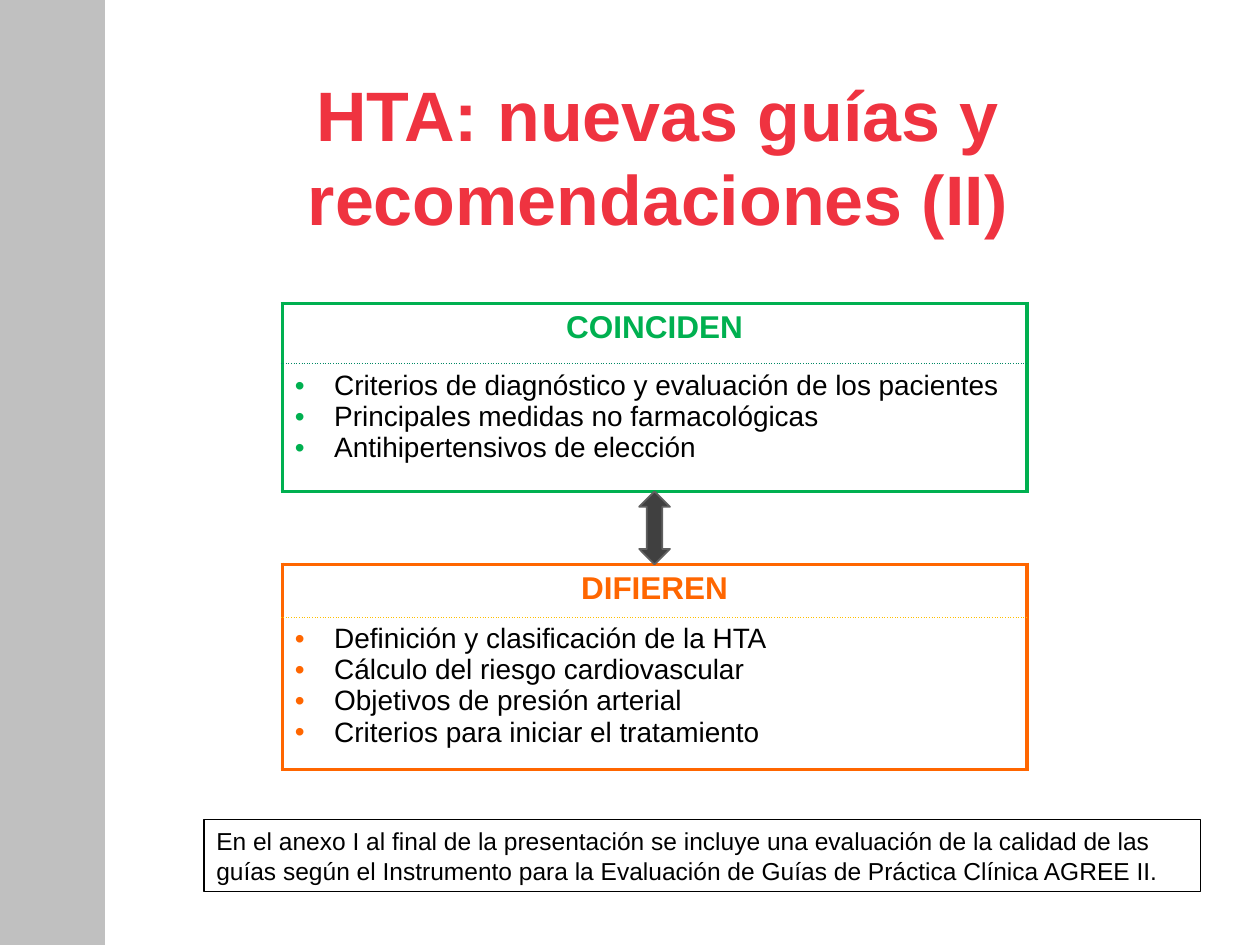
import lxml.etree
import pptx
import pptx.dml.color
import pptx.enum.shapes
import pptx.enum.text
import pptx.oxml.ns
import pptx.util

Pt = pptx.util.Pt
Align = pptx.enum.text.PP_ALIGN
Anchor = pptx.enum.text.MSO_ANCHOR
Shape = pptx.enum.shapes.MSO_SHAPE
qn = pptx.oxml.ns.qn

TITLE = "HTA: nuevas guías y recomendaciones (II)"
NOTE = ("En el anexo I al final de la presentación se incluye una evaluación "
        "de la calidad de las guías según el Instrumento para la Evaluación "
        "de Guías de Práctica Clínica AGREE II.")
PANELS = [
    {"heading": "COINCIDEN", "color": "00B050", "divider": "028865",
     "top": 173.5, "rows": (34.3, 73),
     "items": ["Criterios de diagnóstico y evaluación de los pacientes",
               "Principales medidas no farmacológicas",
               "Antihipertensivos de elección"]},
    {"heading": "DIFIEREN", "color": "FF6600", "divider": "FFC000",
     "top": 322.5, "rows": (30.2, 87),
     "items": ["Definición y clasificación de la HTA",
               "Cálculo del riesgo cardiovascular",
               "Objetivos de presión arterial",
               "Criterios para iniciar el tratamiento"]},
]
PANEL_LEFT, PANEL_WIDTH = 161.3, 425.5
ARROW_WIDTH = 17.6
INDENT = 22.5


def rgb(value):
    return pptx.dml.color.RGBColor.from_string(value)


def set_font(font, size, color, bold=False):
    font.name, font.size, font.bold = "Arial", Pt(size), bold
    font.color.rgb = rgb(color)


def add_shape(page, kind, left, top, width, height, fill, line, weight):
    shape = page.shapes.add_shape(kind, Pt(left), Pt(top), Pt(width), Pt(height))
    shape.shadow.inherit = False
    if fill:
        shape.fill.solid()
        shape.fill.fore_color.rgb = rgb(fill)
    else:
        shape.fill.background()
    shape.line.color.rgb = rgb(line)
    shape.line.width = Pt(weight)
    return shape


def set_borders(cell, borders):
    """Borders are (color, width, dash) for left, right, top and bottom."""
    properties = cell._tc.get_or_add_tcPr()
    for place, (side, (color, width, dash)) in enumerate(zip("LRTB", borders)):
        line = lxml.etree.Element(qn(f"a:ln{side}"), w=str(int(Pt(width))))
        fill = lxml.etree.SubElement(line, qn("a:solidFill"))
        lxml.etree.SubElement(fill, qn("a:srgbClr"), val=color)
        lxml.etree.SubElement(line, qn("a:prstDash"), val=dash)
        properties.insert(place, line)


def add_bullet(para, color):
    properties = para._p.get_or_add_pPr()
    properties.set("marL", str(int(Pt(INDENT))))
    properties.set("indent", str(-int(Pt(INDENT))))
    bullet_color = lxml.etree.SubElement(properties, qn("a:buClr"))
    lxml.etree.SubElement(bullet_color, qn("a:srgbClr"), val=color)
    lxml.etree.SubElement(properties, qn("a:buFont"), typeface="Arial")
    lxml.etree.SubElement(properties, qn("a:buChar"), char="•")


def add_panel(page, panel):
    color = panel["color"]
    table = page.shapes.add_table(
        2, 1, Pt(PANEL_LEFT), Pt(panel["top"]),
        Pt(PANEL_WIDTH), Pt(sum(panel["rows"]))).table
    table.first_row = table.horz_banding = False
    for row, height in zip(table.rows, panel["rows"]):
        row.height = Pt(height)
    head, body = table.cell(0, 0), table.cell(1, 0)
    frame, divider = (color, 2.25, "solid"), (panel["divider"], 0.25, "sysDot")
    set_borders(head, (frame, frame, frame, divider))
    set_borders(body, (frame, frame, divider, frame))
    for cell in (head, body):
        cell.fill.solid()
        cell.fill.fore_color.rgb = rgb("FFFFFF")

    head.text = panel["heading"]
    para = head.text_frame.paragraphs[0]
    para.alignment = Align.CENTER
    set_font(para.font, 18, color, bold=True)
    body.text = "\n".join(panel["items"])
    for para in body.text_frame.paragraphs:
        add_bullet(para, color)
        set_font(para.font, 16, "000000")


def add_title(page):
    title = page.shapes.title
    title.left, title.top, title.width, title.height = (
        Pt(65.5), Pt(37.4), Pt(620.6), Pt(123.8))
    frame = title.text_frame
    frame.text = TITLE
    frame.word_wrap = True
    frame.auto_size = pptx.enum.text.MSO_AUTO_SIZE.NONE
    frame.vertical_anchor = Anchor.TOP
    para = frame.paragraphs[0]
    para.alignment = Align.CENTER
    set_font(para.font, 40, "EF3340", bold=True)


def add_note(page):
    box = add_shape(page, Shape.RECTANGLE, 116.5, 468.5, 569.5, 41,
                    None, "000000", 0.75)
    frame = box.text_frame
    frame.text = NOTE
    frame.word_wrap = True
    frame.vertical_anchor = Anchor.MIDDLE
    para = frame.paragraphs[0]
    para.alignment = Align.LEFT
    set_font(para.font, 14, "000000")


def main():
    deck = pptx.Presentation()
    deck.slide_width, deck.slide_height = Pt(720), Pt(540)
    page = deck.slides.add_slide(deck.slide_layouts[5])
    add_shape(page, Shape.RECTANGLE, 0, 0, 59.8, 540, "C0C0C0", "C0C0C0", 0.75)
    add_title(page)
    for panel in PANELS:
        add_panel(page, panel)
    upper, lower = PANELS
    arrow_top = upper["top"] + sum(upper["rows"])
    add_shape(page, Shape.UP_DOWN_ARROW,
              PANEL_LEFT + (PANEL_WIDTH - ARROW_WIDTH) / 2, arrow_top,
              ARROW_WIDTH, lower["top"] - arrow_top, "404040", "606060", 1)
    add_note(page)
    deck.save("out.pptx")


if __name__ == "__main__":
    main()
